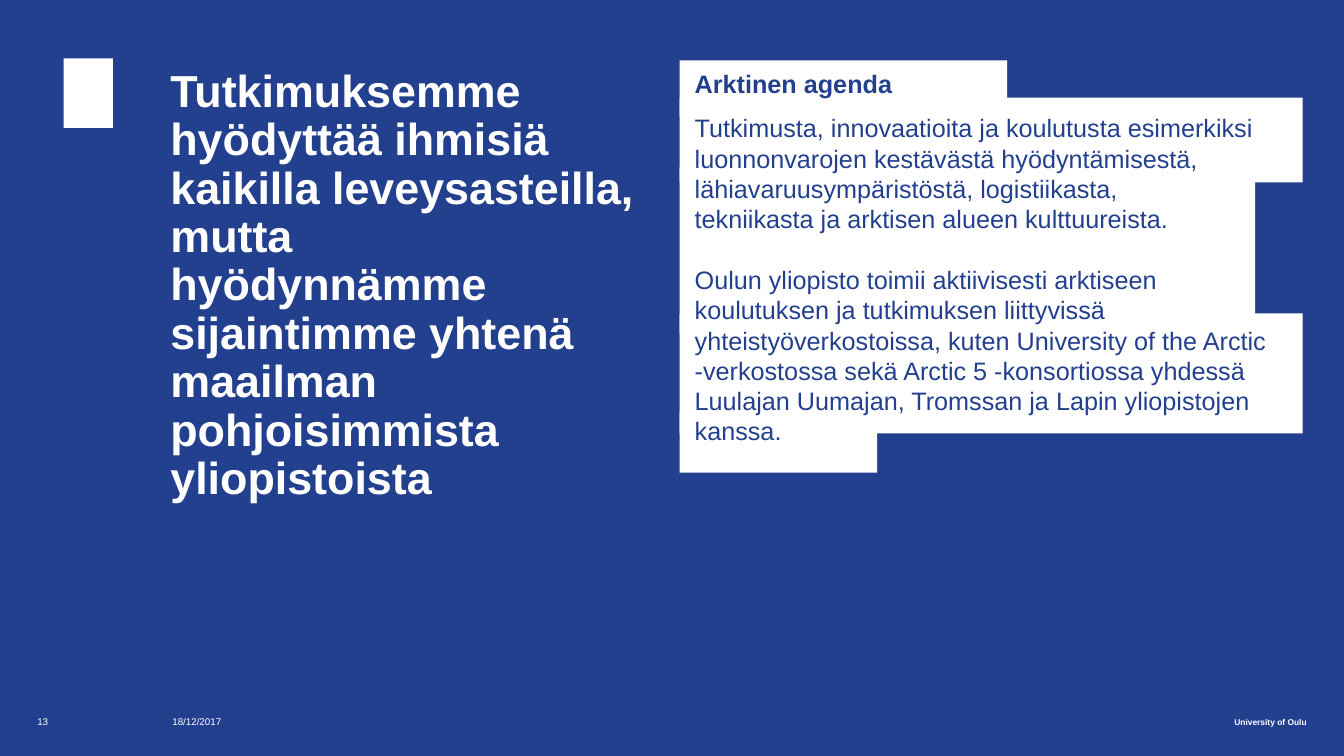
from copy import deepcopy

from pptx import Presentation
from pptx.dml.color import RGBColor
from pptx.enum.shapes import MSO_SHAPE as Shape
from pptx.enum.text import MSO_ANCHOR as Anchor, MSO_AUTO_SIZE as AutoSize, PP_ALIGN as Align
from pptx.oxml.ns import qn
from pptx.util import Inches, Pt

BLUE = RGBColor(0x23, 0x40, 0x8F)
WHITE = RGBColor(0xFF, 0xFF, 0xFF)
FONT = "Arial"

EMBLEM = (0.63, 0.58, 0.49, 0.69)
PANEL_LEFT = 6.74
PANEL_STEPS = [
    (0.6, 3.25, 0.56),
    (0.97, 6.18, 0.84),
    (1.66, 5.71, 1.65),
    (3.11, 6.18, 1.19),
    (4.08, 1.96, 0.61),
]
TITLE = (
    "Tutkimuksemme hyödyttää ihmisiä kaikilla leveysasteilla, mutta\n"
    "hyödynnämme sijaintimme yhtenä maailman pohjoisimmista yliopistoista"
)
AGENDA = [
    ("Arktinen agenda", True, 0),
    (
        "Tutkimusta, innovaatioita ja koulutusta esimerkiksi luonnonvarojen "
        "kestävästä hyödyntämisestä, lähiavaruusympäristöstä, logistiikasta,\n"
        "tekniikasta ja arktisen alueen kulttuureista.",
        False, 0,
    ),
    (
        "Oulun yliopisto toimii aktiivisesti arktiseen\n"
        "koulutuksen ja tutkimuksen liittyvissä yhteistyöverkostoissa, "
        "kuten University of the Arctic\n"
        "-verkostossa sekä Arctic 5 -konsortiossa yhdessä Luulajan "
        "Uumajan, Tromssan ja Lapin yliopistojen kanssa.",
        False, 12,
    ),
]
FOOTERS = [
    ("13", (0.37, 7.04, 0.42, 0.24), 7, False, Align.LEFT),
    ("18/12/2017", (1.71, 7.04, 0.72, 0.24), 7, False, Align.LEFT),
    ("University of Oulu", (10.62, 7.04, 2.34, 0.24), 6, True, Align.RIGHT),
]


def apply(target, **values):
    for name, value in values.items():
        setattr(target, name, value)


def place(shape, area):
    names = ("left", "top", "width", "height")
    apply(shape, **dict(zip(names, map(Inches, area))))


def write(para, text, size, color, bold, **layout):
    para.text = text
    apply(para, **layout)
    for span in para.runs:
        apply(span.font, name=FONT, size=Pt(size), bold=bold)
        span.font.color.rgb = color
    span_format = para.runs[0].font
    for line_break in para._p.findall(qn("a:br")):
        line_break.insert(0, deepcopy(span_format._element))


def remove_bullet(para):
    properties = para._p.get_or_add_pPr()
    properties.set("marL", "0")
    properties.set("indent", "0")
    properties.append(properties.makeelement(qn("a:buNone"), {}))


def add_block(page, area):
    block = page.shapes.add_shape(Shape.RECTANGLE, *map(Inches, area))
    block.shadow.inherit = False
    block.fill.solid()
    block.fill.fore_color.rgb = WHITE
    block.line.fill.background()


def add_footer(page, text, area, size, bold, align):
    frame = page.shapes.add_textbox(*map(Inches, area)).text_frame
    apply(frame, word_wrap=True, vertical_anchor=Anchor.MIDDLE,
          margin_left=0, margin_top=0, margin_right=0, margin_bottom=0)
    write(frame.paragraphs[0], text, size, WHITE, bold, alignment=align)


def raise_placeholder(page, placeholder, area):
    place(placeholder, area)
    page.shapes.element.append(placeholder.element)
    frame = placeholder.text_frame
    apply(frame, word_wrap=True, auto_size=AutoSize.NONE, vertical_anchor=Anchor.TOP)
    return frame


def fill_title(page):
    frame = raise_placeholder(page, page.shapes.title, (1.59, 0.63, 4.96, 3.9))
    write(frame.paragraphs[0], TITLE, 32, WHITE, True,
          alignment=Align.LEFT, line_spacing=0.9)


def fill_agenda(page):
    frame = raise_placeholder(page, page.placeholders[1], (6.79, 0.63, 6.29, 6.27))
    for index, (text, bold, before) in enumerate(AGENDA):
        para = frame.add_paragraph() if index else frame.paragraphs[0]
        remove_bullet(para)
        write(para, text, 18, BLUE, bold, alignment=Align.LEFT, line_spacing=1.0,
              space_before=Pt(before), space_after=Pt(10))


def main():
    deck = Presentation()
    apply(deck, slide_width=Inches(13.33), slide_height=Inches(7.5))
    page = deck.slides.add_slide(deck.slide_layouts[1])
    page.background.fill.solid()
    page.background.fill.fore_color.rgb = BLUE

    add_block(page, EMBLEM)
    for top, width, height in PANEL_STEPS:
        add_block(page, (PANEL_LEFT, top, width, height))
    fill_title(page)
    fill_agenda(page)
    for footer in FOOTERS:
        add_footer(page, *footer)
    deck.save("out.pptx")


if __name__ == "__main__":
    main()
